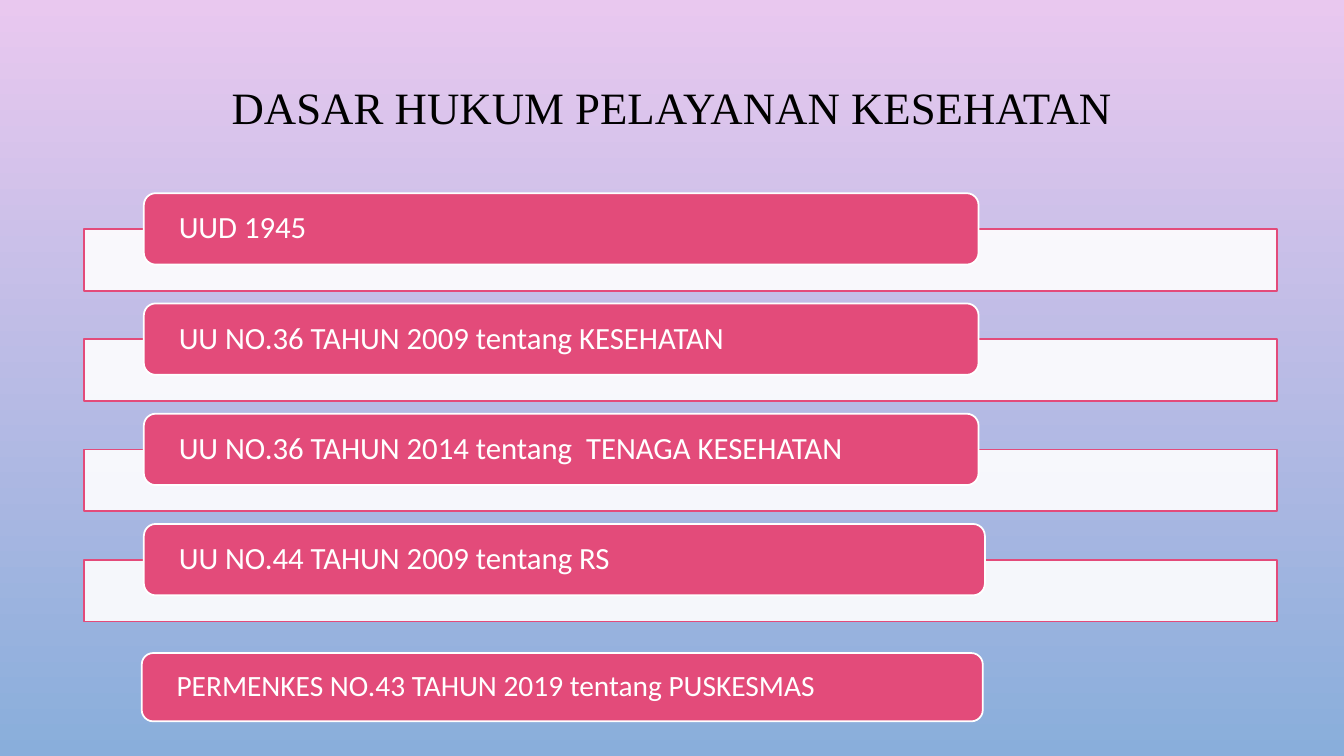
"""Build the slide listing the legal basis of health services."""
import pptx
import pptx.dml.color
import pptx.enum.shapes
import pptx.enum.text
import pptx.oxml.ns
import pptx.util
from lxml import etree

PX = 9525
PINK, WHITE = "E34B7A", "FFFFFF"
SHAPE = pptx.enum.shapes.MSO_SHAPE
ALIGN = pptx.enum.text.PP_ALIGN


def rgb(value):
    return pptx.dml.color.RGBColor.from_string(value)


def add_box(kind, box, fill, line):
    sp = s.shapes.add_shape(kind, *[v * PX for v in box])
    sp.shadow.inherit = False
    sp.fill.solid()
    sp.fill.fore_color.rgb = rgb(fill)
    sp.line.color.rgb = rgb(line)
    sp.line.width = pptx.util.Pt(1.25)
    return sp


prs = pptx.Presentation()
prs.slide_width, prs.slide_height = 1280 * PX, 720 * PX
s = prs.slides.add_slide(prs.slide_layouts[6])

bg = s.background.fill
bg.gradient()
bg.gradient_angle = 270
for stop, color in zip(bg.gradient_stops, ("E9C8EF", "89AEDB")):
    stop.color.rgb = rgb(color)

title = s.shapes.add_textbox(96 * PX, 65 * PX, 1088 * PX, 79 * PX)
title.text_frame.text = "DASAR HUKUM PELAYANAN KESEHATAN"
texts = [(title, 0, ALIGN.CENTER, "Times New Roman", 32, "000000")]

laws = [
    ("UUD 1945", 795),
    ("UU NO.36 TAHUN 2009 tentang KESEHATAN", 795),
    ("UU NO.36 TAHUN 2014 tentang  TENAGA KESEHATAN", 795),
    ("UU NO.44 TAHUN 2009 tentang RS", 801),
]
pills = []
for i, (law, width) in enumerate(laws):
    bar = add_box(SHAPE.RECTANGLE, (80, 218 + 105 * i, 1136, 59), WHITE, PINK)
    clr = bar.fill._xPr.find(".//" + pptx.oxml.ns.qn("a:srgbClr"))
    etree.SubElement(clr, pptx.oxml.ns.qn("a:alpha"), val="90000")
    pills.append((law, (137, 184 + 105 * i, width, 68), 22))
pills.append(("PERMENKES NO.43 TAHUN 2019 tentang PUSKESMAS", (135, 622, 801, 65), 21))

for law, box, size in pills:
    pill = add_box(SHAPE.ROUNDED_RECTANGLE, box, PINK, WHITE)
    pill.text_frame.text = law
    texts.append((pill, 30, ALIGN.LEFT, "Calibri", size, WHITE))

for sp, inset, align, font, size, color in texts:
    tf = sp.text_frame
    tf.word_wrap = True
    tf.vertical_anchor = pptx.enum.text.MSO_ANCHOR.MIDDLE
    tf.margin_left = tf.margin_right = inset * PX
    tf.margin_top = tf.margin_bottom = 0
    p = tf.paragraphs[0]
    p.alignment = align
    p.line_spacing = 0.9
    p.font.name = font
    p.font.size = pptx.util.Pt(size)
    p.font.color.rgb = rgb(color)

prs.save("out.pptx")
